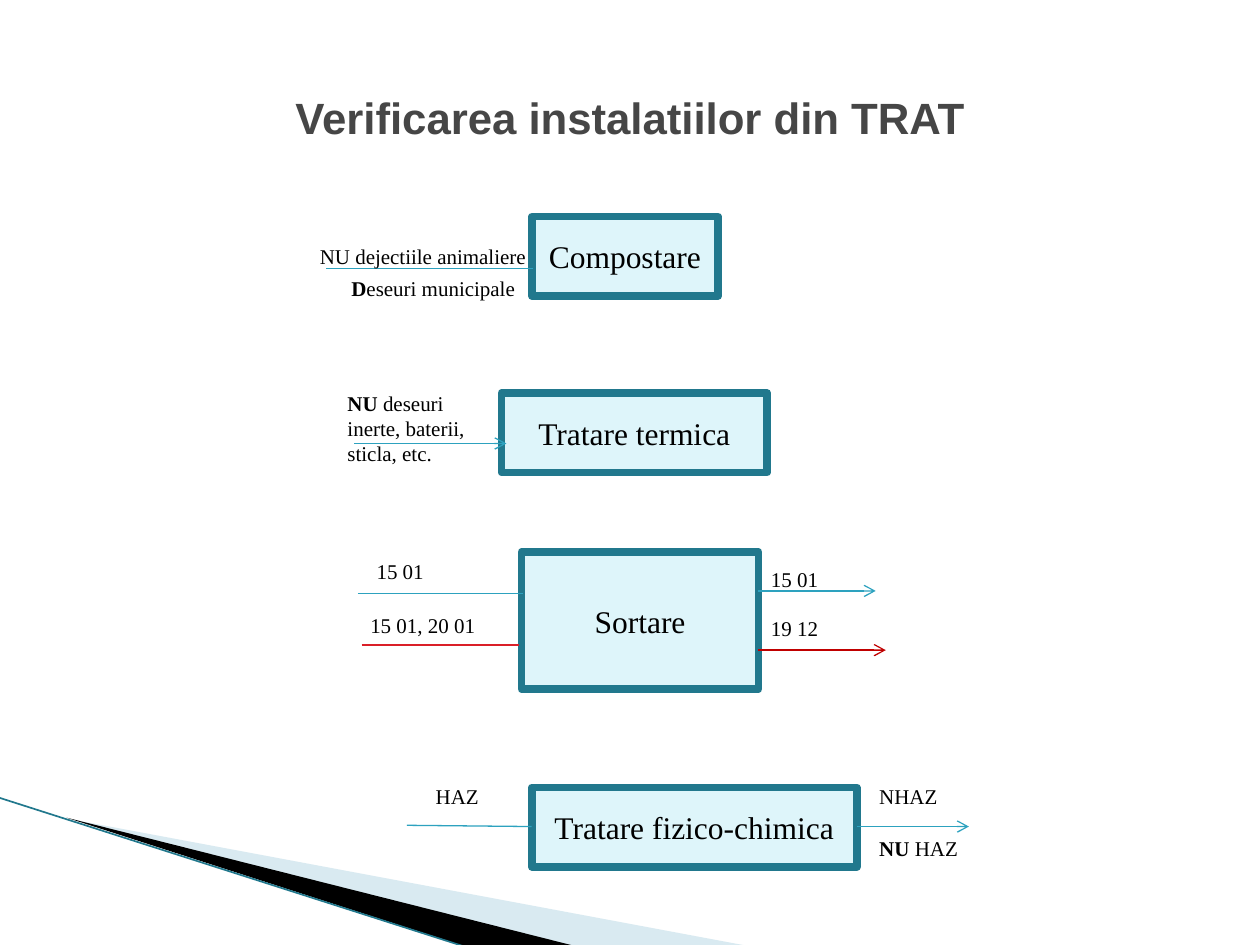
from dataclasses import dataclass

from lxml.etree import SubElement
from pptx import Presentation
from pptx.dml.color import RGBColor
from pptx.enum.shapes import MSO_CONNECTOR, MSO_SHAPE
from pptx.enum.text import MSO_ANCHOR, PP_ALIGN
from pptx.oxml.ns import qn
from pptx.util import Inches, Pt

COLORS = {
    "text": "000000", "title": "464646", "box": "DEF5FA", "border": "21788D",
    "teal": "2DA2BF", "red": "DA1F28", "dark_red": "C00000",
    "pale": "A0CBDC", "black": "000000",
}
SERIF = "Times New Roman"


@dataclass
class Run:
    text: str
    bold: bool = False


@dataclass
class Para:
    runs: list[Run]
    before: float = 0
    indent: float = 0


@dataclass
class Label:
    x: float
    y: float
    w: float
    h: float
    paras: list[Para]


@dataclass
class Box:
    x: float
    y: float
    w: float
    h: float
    text: str


@dataclass
class Flow:
    x1: float
    y1: float
    x2: float
    y2: float
    color: str = "teal"
    arrow: bool = False


@dataclass
class Wedge:
    points: list[tuple[float, float]]
    color: str
    opacity: int = 100


def plain(text: str) -> list[Para]:
    return [Para([Run(text)])]


WEDGES = [
    Wedge([(0.55, 6.5), (5.95, 7.51), (4.56, 7.51)], "pale", 40),
    Wedge([(0.53, 6.49), (4.57, 7.51), (3.72, 7.52)], "black"),
]
BOXES = [
    Box(4.22, 1.72, 1.48, 0.63, "Compostare"),
    Box(3.98, 3.12, 2.11, 0.63, "Tratare termica"),
    Box(4.14, 4.38, 1.88, 1.09, "Sortare"),
    Box(4.22, 6.25, 2.58, 0.63, "Tratare fizico-chimica"),
]
FLOWS = [
    Flow(2.59, 2.13, 4.23, 2.13),
    Flow(2.81, 3.52, 4.02, 3.52, arrow=True),
    Flow(2.84, 4.71, 4.15, 4.71),
    Flow(2.87, 5.12, 4.12, 5.12, "red"),
    Flow(6.02, 4.69, 6.95, 4.69, arrow=True),
    Flow(6.02, 5.16, 7.03, 5.16, "dark_red", True),
    Flow(3.23, 6.55, 4.22, 6.56),
    Flow(6.8, 6.56, 7.69, 6.56, arrow=True),
]
LABELS = [
    Label(2.44, 1.88, 1.9, 0.55, [
        Para([Run("NU dejectiile animaliere")]),
        Para([Run("D", True), Run("eseuri municipale")], 4, 0.25),
    ]),
    Label(2.66, 3.05, 1.33, 0.71, [
        Para([Run("NU", True), Run(" deseuri inerte, baterii, sticla, etc.")]),
    ]),
    Label(2.89, 4.38, 1.02, 0.3, plain("15 01")),
    Label(6.02, 4.45, 1.02, 0.3, plain("15 01")),
    Label(2.84, 4.81, 1.25, 0.3, plain("15 01, 20 01")),
    Label(6.02, 4.84, 1.02, 0.3, plain("19 12")),
    Label(3.36, 6.17, 0.7, 0.3, plain("HAZ")),
    Label(6.88, 6.17, 0.94, 0.71, [
        Para([Run("NHAZ")]),
        Para([Run("NU ", True), Run("HAZ")], 15),
    ]),
]


def rgb(name: str) -> RGBColor:
    return RGBColor.from_string(COLORS[name])


def add_run(p, run: Run, size: float, font: str = SERIF, color: str = "text") -> None:
    r = p.add_run()
    r.text = run.text
    r.font.size = Pt(size)
    r.font.name = font
    r.font.bold = run.bold
    r.font.color.rgb = rgb(color)


def add_wedge(s, wedge: Wedge) -> None:
    points = [(Inches(x), Inches(y)) for x, y in wedge.points]
    builder = s.shapes.build_freeform(*points[0])
    builder.add_line_segments(points[1:], close=True)
    sp = builder.convert_to_shape()
    sp.shadow.inherit = False
    sp.fill.solid()
    sp.fill.fore_color.rgb = rgb(wedge.color)
    sp.line.fill.background()
    if wedge.opacity < 100:
        clr = sp.fill._xPr.find(qn("a:solidFill"))[0]
        SubElement(clr, qn("a:alpha")).set("val", str(wedge.opacity * 1000))


def add_flow(s, flow: Flow, width: float = 0.75) -> None:
    ends = [Inches(v) for v in (flow.x1, flow.y1, flow.x2, flow.y2)]
    cn = s.shapes.add_connector(MSO_CONNECTOR.STRAIGHT, *ends)
    cn.line.width = Pt(width)
    cn.line.color.rgb = rgb(flow.color)
    if flow.arrow:
        SubElement(cn.line._get_or_add_ln(), qn("a:tailEnd")).set("type", "arrow")
    SubElement(cn._element.spPr, qn("a:effectLst"))


def add_box(s, box: Box) -> None:
    sp = s.shapes.add_shape(MSO_SHAPE.RECTANGLE, Inches(box.x), Inches(box.y),
                            Inches(box.w), Inches(box.h))
    sp.shadow.inherit = False
    sp.fill.solid()
    sp.fill.fore_color.rgb = rgb("box")
    sp.line.color.rgb = rgb("border")
    sp.line.width = Pt(4.33)
    tf = sp.text_frame
    tf.vertical_anchor = MSO_ANCHOR.MIDDLE
    p = tf.paragraphs[0]
    p.alignment = PP_ALIGN.CENTER
    add_run(p, Run(box.text), 18)


def add_label(s, label: Label) -> None:
    tf = s.shapes.add_textbox(Inches(label.x), Inches(label.y),
                              Inches(label.w), Inches(label.h)).text_frame
    tf.word_wrap = True
    for i, para in enumerate(label.paras):
        p = tf.add_paragraph() if i else tf.paragraphs[0]
        if para.before:
            p.space_before = Pt(para.before)
        if para.indent:
            p._p.get_or_add_pPr().set("marL", str(Inches(para.indent)))
        for run in para.runs:
            add_run(p, run, 12)


def add_title(s, text: str) -> None:
    tf = s.shapes.add_textbox(Inches(0.5), Inches(0.3), Inches(9), Inches(1.25)).text_frame
    tf.word_wrap = True
    tf.vertical_anchor = MSO_ANCHOR.MIDDLE
    p = tf.paragraphs[0]
    p.alignment = PP_ALIGN.CENTER
    add_run(p, Run(text, True), 25, "Arial", "title")


def main() -> None:
    prs = Presentation()
    prs.slide_width, prs.slide_height = Inches(10), Inches(7.5)
    s = prs.slides.add_slide(prs.slide_layouts[6])
    for wedge in WEDGES:
        add_wedge(s, wedge)
    add_flow(s, Flow(-0.01, 6.33, 3.71, 7.52, "border"), 0.95)
    add_title(s, "Verificarea instalatiilor din TRAT")
    for box in BOXES:
        add_box(s, box)
    for flow in FLOWS:
        add_flow(s, flow)
    for label in LABELS:
        add_label(s, label)
    prs.save("out.pptx")


if __name__ == "__main__":
    main()
